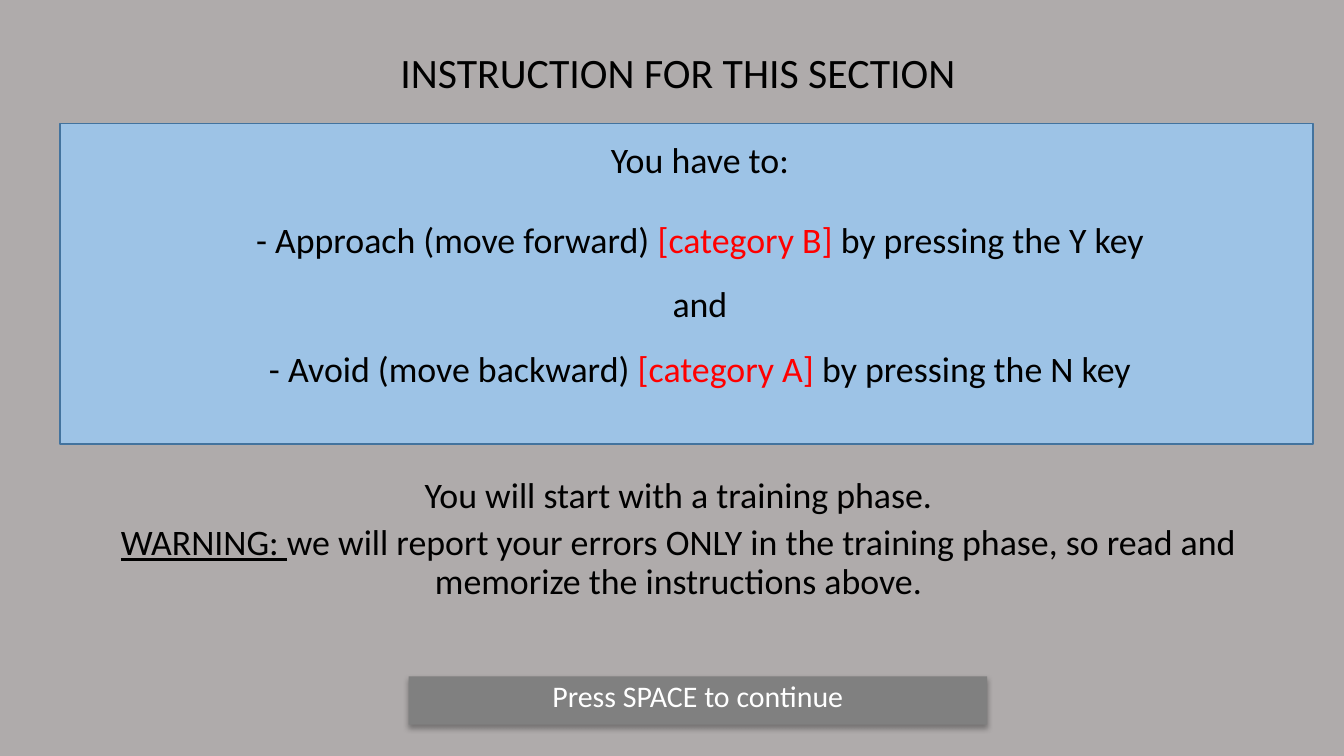
from lxml.etree import SubElement
from pptx import Presentation
from pptx.dml.color import RGBColor
from pptx.enum.shapes import MSO_SHAPE as SHAPE
from pptx.enum.text import MSO_ANCHOR as ANCHOR, MSO_AUTO_SIZE as AUTO, PP_ALIGN as ALIGN
from pptx.oxml.ns import qn
from pptx.util import Pt

GREY_BG = RGBColor(0xAF, 0xAB, 0xAB)
PANEL_BLUE = RGBColor(0x9D, 0xC3, 0xE6)
PANEL_EDGE = RGBColor(0x43, 0x73, 0x9E)
BUTTON_GREY = RGBColor(0x80, 0x80, 0x80)
BLACK = RGBColor(0, 0, 0)
RED = RGBColor(0xFF, 0, 0)
WHITE = RGBColor(0xFF, 0xFF, 0xFF)

BREAK = ("\n", {})


def set_attrs(obj, values):
    for name, value in values.items():
        setattr(obj, name, value)


def place(sp, box):
    set_attrs(sp, dict(zip(("left", "top", "width", "height"), map(Pt, box))))


def write(sp, paras, size, color=BLACK):
    tf = sp.text_frame
    set_attrs(tf, {"word_wrap": True, "auto_size": AUTO.NONE, "vertical_anchor": ANCHOR.TOP})
    for i, (fmt, runs) in enumerate(paras):
        p = tf.add_paragraph() if i else tf.paragraphs[0]
        set_attrs(p, {"alignment": ALIGN.CENTER, "line_spacing": 0.9, "space_before": Pt(0), **fmt})
        for text, font in runs:
            if text == "\n":
                p.add_line_break()
                continue
            r = p.add_run()
            r.text = text
            font = {"color": color, **font}
            r.font.color.rgb = font.pop("color")
            set_attrs(r.font, {"name": "Calibri", "size": Pt(size), "bold": False, **font})


def add_rect(s, box, fill):
    sp = s.shapes.add_shape(SHAPE.RECTANGLE, *map(Pt, box))
    sp.shadow.inherit = False
    sp.fill.solid()
    sp.fill.fore_color.rgb = fill
    return sp


def add_text(s, box, paras, size):
    write(s.shapes.add_textbox(*map(Pt, box)), paras, size)


def add_title(s, box):
    sp = s.shapes.title
    place(sp, box)
    write(sp, [({}, [("INSTRUCTION FOR THIS SECTION", {})])], 28)


def add_task_panel(s, box):
    x, y, w, h = box
    sp = add_rect(s, box, PANEL_BLUE)
    sp.line.color.rgb = PANEL_EDGE
    sp.line.width = Pt(1)
    red = {"color": RED}
    tasks = [
        ("- Approach (move forward)", {}), (" [category B] ", red),
        ("by pressing the Y key", {}), BREAK,
        ("and", {}), BREAK,
        ("- Avoid (move backward) ", {}), ("[category A] ", red),
        ("by pressing the N key", {}),
    ]
    paras = [
        ({}, [("You have to:", {})]),
        ({"line_spacing": 1.5, "space_before": Pt(9.4)}, tasks),
    ]
    add_text(s, (x + 18.7, y + 9.4, w - 19.4, h - 18.7), paras, 24)


def add_training_note(s, box):
    after = {"space_after": Pt(6)}
    warning = [
        ("WARNING: ", {"underline": True}),
        ("we will report your errors ONLY in the training phase, "
         "so read and memorize the instructions above.", {}),
    ]
    add_text(s, box, [(after, [("You will start with a training phase.", {})]), (after, warning)], 24)


def add_button(s, box):
    sp = add_rect(s, box, BUTTON_GREY)
    sp.line.fill.background()
    effects = sp._element.spPr.find(qn("a:effectLst"))
    shadow = SubElement(effects, qn("a:outerShdw"), blurRad=str(Pt(3.5)), dist=str(Pt(2.2)),
                        dir="5400000", algn="t", rotWithShape="0")
    color = SubElement(shadow, qn("a:srgbClr"), val=str(BLACK))
    SubElement(color, qn("a:alpha"), val="32000")
    write(sp, [({}, [("Press SPACE to continue", {})])], 20, WHITE)


def main():
    prs = Presentation()
    set_attrs(prs, {"slide_width": Pt(900), "slide_height": Pt(506.2)})
    s = prs.slides.add_slide(prs.slide_layouts[5])
    s.background.fill.solid()
    s.background.fill.fore_color.rgb = GREY_BG
    add_title(s, (242.6, 31.7, 422.6, 32.4))
    add_task_panel(s, (40.3, 82.8, 838.8, 214.6))
    add_training_note(s, (52.6, 316.1, 803.5, 100))
    add_button(s, (273.6, 452.9, 387.4, 32.4))
    prs.save("out.pptx")


if __name__ == "__main__":
    main()
